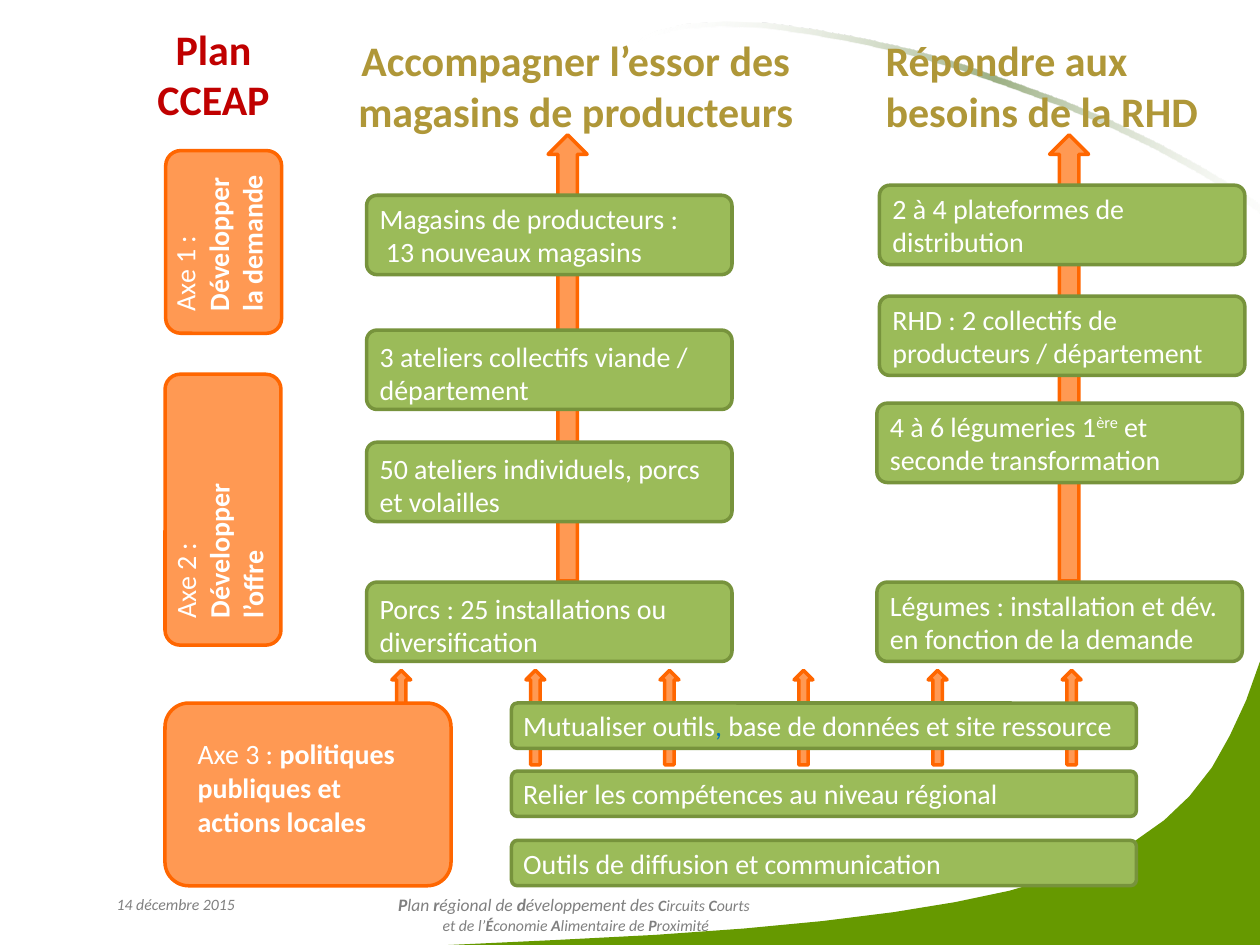
from lxml import etree
from pptx import Presentation
from pptx.dml.color import RGBColor
from pptx.enum.shapes import MSO_SHAPE as SHAPE
from pptx.enum.text import MSO_ANCHOR as ANCHOR, PP_ALIGN as ALIGN
from pptx.oxml import parse_xml
from pptx.oxml.ns import nsdecls
from pptx.util import Inches, Pt

WHITE, GREY, GOLD, RED = "FFFFFF", "808080", "AF9738", "C00000"
ORANGE = ("FF9953", "FF6600")
GREEN = ("9BBB59", "77933C")
rgb = RGBColor.from_string


def add_block(kind, box, colors, adj, rotation=0):
    sp = slide.shapes.add_shape(kind, *map(Inches, box))
    sp.shadow.inherit = False
    sp.rotation = rotation
    for i, value in enumerate(adj):
        sp.adjustments[i] = value
    fill, line = map(rgb, colors)
    sp.fill.solid()
    sp.fill.fore_color.rgb = fill
    sp.line.color.rgb = line
    sp.line.width = Pt(2)
    return sp


def write(sp, paragraphs, size=16, color=WHITE, align=ALIGN.LEFT,
          anchor=ANCHOR.TOP, insets=(0.1, 0.05, 0.1, 0.05), italic=None):
    """Fill a shape; a paragraph is a list of (text, bold, changes) runs."""
    tf = sp.text_frame
    tf.word_wrap = True
    tf.vertical_anchor = anchor
    (tf.margin_left, tf.margin_top,
     tf.margin_right, tf.margin_bottom) = map(Inches, insets)
    for i, runs in enumerate(paragraphs):
        p = tf.add_paragraph() if i else tf.paragraphs[0]
        p.alignment = align
        for text, bold, changes in runs:
            r = p.add_run()
            r.text = text
            r.font.name = "Calibri"
            r.font.size = Pt(changes.get("size", size))
            r.font.bold = bold
            r.font.italic = italic
            r.font.color.rgb = rgb(changes.get("color", color))
            if "baseline" in changes:
                r.font._element.set("baseline", str(changes["baseline"]))


prs = Presentation()
prs.slide_width, prs.slide_height = Inches(10), Inches(7.5)
slide = prs.slides.add_slide(prs.slide_layouts[6])

# Background: green corner and fading arc
corner = [
    (10, 5.25), (10, 7.5), (3.56, 7.5), (4.42, 7.46), (5.2, 7.42), (5.9, 7.37),
    (6.53, 7.31), (7.09, 7.24), (7.58, 7.16), (8.01, 7.07), (8.39, 6.96),
    (8.72, 6.83), (9, 6.68), (9.24, 6.51), (9.44, 6.32), (9.62, 6.09),
    (9.76, 5.84), (9.89, 5.56)]
arc_top = [
    (5.1, 0.3), (5.2, 0.25), (5.45, 0.19), (5.75, 0.17), (6.08, 0.18),
    (6.44, 0.23), (6.83, 0.3), (7.23, 0.39), (7.64, 0.51), (8.04, 0.65),
    (8.45, 0.8), (8.83, 0.96), (9.2, 1.14), (9.53, 1.32), (9.83, 1.5),
    (10.08, 1.68), (10.28, 1.86), (10.36, 1.95)]
arc_bottom = [(x - 0.04, y + 0.04) for x, y in reversed(arc_top)]
outlines = []
for points in (corner, arc_top + arc_bottom):
    builder = slide.shapes.build_freeform(
        *map(Inches, points[0]), scale=1.0)
    builder.add_line_segments([(Inches(x), Inches(y)) for x, y in points[1:]])
    sp = builder.convert_to_shape()
    sp.shadow.inherit = False
    sp.fill.solid()
    sp.fill.fore_color.rgb = rgb("669900")
    sp.line.fill.background()
    outlines.append(sp)

stops = "".join(
    f'<a:gs pos="{pos}"><a:srgbClr val="{color}"><a:alpha val="{alpha}"/></a:srgbClr></a:gs>'
    for pos, color, alpha in ((0, WHITE, 0), (50000, "9CB084", 100000),
                              (100000, WHITE, 0)))
gradient = parse_xml(
    f'<a:gradFill {nsdecls("a")}><a:gsLst>{stops}</a:gsLst>'
    '<a:lin ang="1308000" scaled="0"/></a:gradFill>')
arc_props = outlines[1]._element.spPr
arc_props.replace(arc_props.find("{*}solidFill"), gradient)

# Arrows
for i in range(6):
    add_block(SHAPE.UP_ARROW, (3.11 + i * (8.43 - 3.11) / 5, 5.32, 0.15, 0.75),
              ORANGE, (0.5, 0.5))
for x in (4.35, 8.33):
    add_block(SHAPE.UP_ARROW, (x, 1.07, 0.31, 3.54), ORANGE, (0.5, 0.5))

# Axes: orange panel, then its label
axes = [
    ((1.05, 1.46, 1.45, 0.92), 270, (1, 1.48, 1.37, 0.81), 270,
     "Axe 1 : ", "Développer la demande"),
    ((1.31, 2.97, 0.92, 2.15), 0, (0.63, 3.86, 1.8, 0.49), 270,
     "Axe 2 : ", "Développer l’offre"),
    ((1.31, 5.58, 2.27, 1.45), 0, (1.47, 5.8, 2.04, 0.7), 0,
     "Axe 3 : ", "politiques publiques et actions locales")]
for panel, panel_turn, label, label_turn, name, goal in axes:
    add_block(SHAPE.ROUNDED_RECTANGLE, panel, ORANGE, (0.13,), panel_turn)
    sp = slide.shapes.add_textbox(*map(Inches, label))
    sp.rotation = label_turn
    write(sp, [[(name, False, {}), (goal, True, {})]])

# Green action boxes: position, insets, paragraphs of runs
action, wide = (2.9, 0.63), (4.96, 0.36)
tight, low, even = (0.08, 0, 0, 0), (0.08, 0.05, 0.1, 0), (0.08, 0.05, 0.1, 0.05)
actions = [
    (2.91, 1.55, action, tight, [[("Magasins de producteurs :", {})],
                                 [(" 13 nouveaux magasins", {})]]),
    (2.91, 2.62, action, low, [[("3 ateliers collectifs viande / département", {})]]),
    (2.91, 3.51, action, low, [[("50 ateliers individuels, porcs et volailles", {})]]),
    (2.91, 4.62, action, low, [[("Porcs : 25 installations ou diversification", {})]]),
    (6.98, 1.47, action, even, [[("2 à 4 plateformes de distribution", {})]]),
    (6.98, 2.35, action, even,
     [[("RHD : 2 collectifs de producteurs / département", {})]]),
    (6.96, 3.2, action, even, [[("4 à 6 légumeries 1", {}), ("ère", {"baseline": 30000}),
                                (" et seconde transformation", {})]]),
    (6.96, 4.62, action, even,
     [[("Légumes : installation et dév. en fonction de la demande", {})]]),
    (4.06, 5.58, wide, even, [[("Mutualiser outils", {}), (",", {"color": "0070C0"}),
                               (" base de données et site ressource", {})]]),
    (4.06, 6.12, wide, even, [[("Relier les compétences au niveau régional", {})]]),
    (4.06, 6.67, wide, even, [[("Outils de diffusion et communication", {})]])]
for x, y, extent, insets, paragraphs in actions:
    sp = add_block(SHAPE.ROUNDED_RECTANGLE, (x, y, *extent), GREEN, (0.13,))
    write(sp, [[(text, False, changes) for text, changes in runs]
               for runs in paragraphs], anchor=ANCHOR.MIDDLE, insets=insets)

# Headings
headings = [
    ((1.06, 0.35, 1.27, 0.47), "Plan CCEAP", RED, ALIGN.CENTER),
    ((2.72, 0.35, 3.7, 0.65), "Accompagner l’essor des magasins de producteurs",
     GOLD, ALIGN.CENTER),
    ((6.93, 0.35, 2.92, 0.65), "Répondre aux besoins de la RHD", GOLD, ALIGN.LEFT)]
for box, text, color, align in headings:
    sp = slide.shapes.add_textbox(*map(Inches, box))
    write(sp, [[(text, True, {})]], 24, color, align, ANCHOR.MIDDLE)

# Footer: bold and plain pieces alternate
sp = slide.shapes.add_textbox(*map(Inches, (0.78, 7.05, 1.23, 0.4)))
write(sp, [[("14 décembre 2015", False, {})]], 9, GREY, ALIGN.CENTER, italic=True)

large = ["P", "lan", " r", "égional de", " d", "éveloppement des "]
small = ["C", "ircuits ", "C", "ourts "]
second = ["et de l’", "É", "conomie ", "A", "limentaire de ", "P", "roximité"]
first_line = [(text, i % 2 == 0, {"size": 10 if i < len(large) else 9})
              for i, text in enumerate(large + small)]
second_line = [(text, i % 2 == 1, {}) for i, text in enumerate(second)]
sp = slide.shapes.add_textbox(*map(Inches, (2.17, 7.05, 4.8, 0.4)))
write(sp, [first_line, second_line], 9, GREY, ALIGN.CENTER, italic=True)

prs.save("out.pptx")
